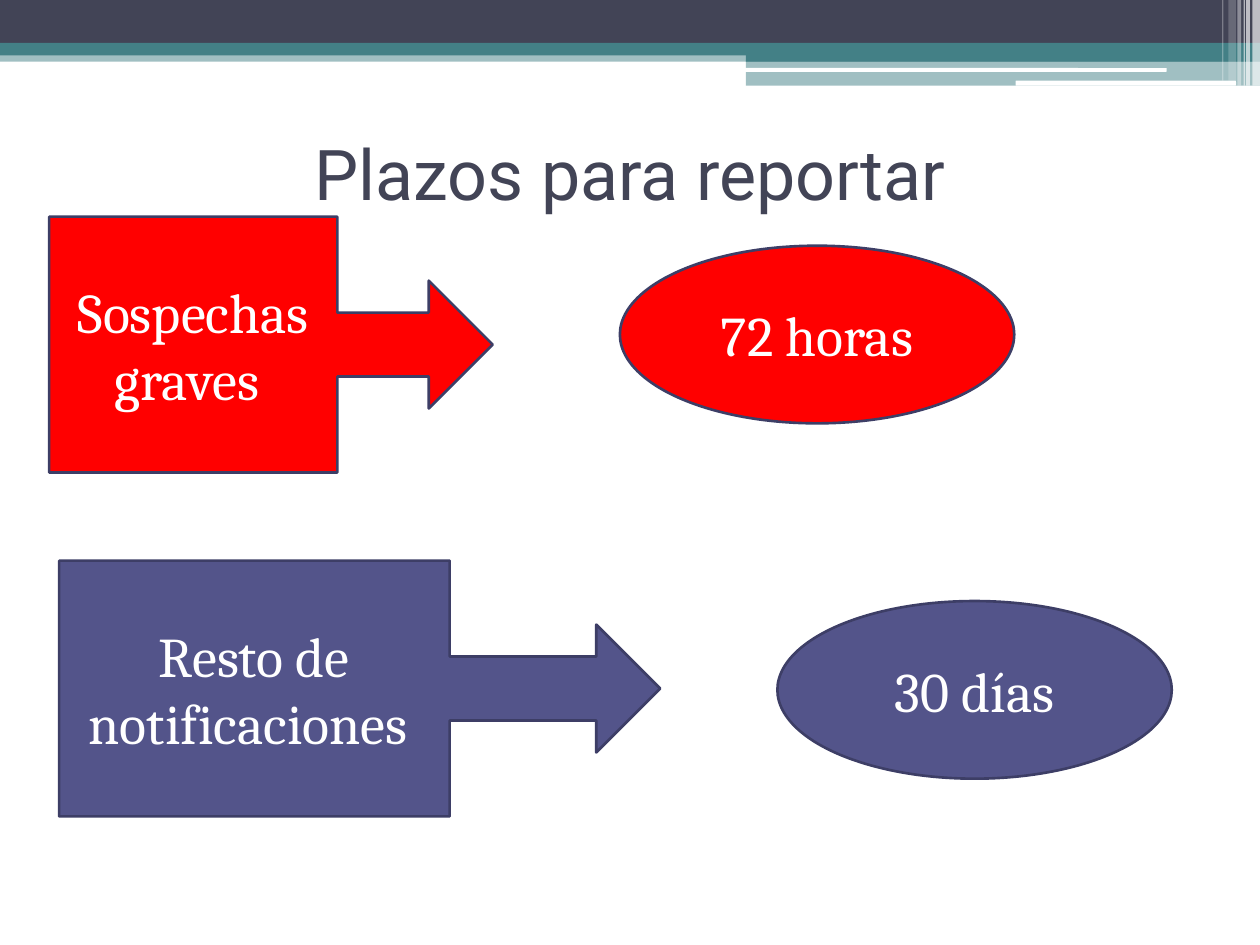
from dataclasses import dataclass

from lxml import etree
from pptx import Presentation
from pptx.dml.color import RGBColor
from pptx.enum.shapes import MSO_SHAPE
from pptx.enum.text import MSO_ANCHOR, PP_ALIGN
from pptx.oxml.ns import qn
from pptx.util import Inches, Pt

RECTANGLE = MSO_SHAPE.RECTANGLE
ROUNDED = MSO_SHAPE.ROUNDED_RECTANGLE
CALLOUT = MSO_SHAPE.RIGHT_ARROW_CALLOUT
ELLIPSE = MSO_SHAPE.OVAL
MIDDLE = MSO_ANCHOR.MIDDLE
CENTER = PP_ALIGN.CENTER
TITLE_ONLY = 5


@dataclass(frozen=True)
class Theme:
    dark: str = "424456"
    teal: str = "438086"
    white: str = "FFFFFF"
    urgent: str = "FF0000"
    regular: str = "53548A"
    outline: str = "3D3E66"
    title_font: str = "Roboto"
    body_font: str = "Cambria"
    title_size: int = 40
    body_size: int = 32
    outline_width: float = 1.5


class SlideBuilder:
    def __init__(self, page, theme):
        self.page = page
        self.theme = theme

    def title(self, text, left, top, width, height):
        box = self.page.shapes.title
        box.left, box.top = Inches(left), Inches(top)
        box.width, box.height = Inches(width), Inches(height)
        theme = self.theme
        self.set_text(box, text, theme.title_font, theme.title_size, theme.dark)

    def band(self, left, top, width, height, color, opacity=100, kind=RECTANGLE):
        """Draw a borderless strip; opacity is a percentage."""
        strip = self.filled(kind, left, top, width, height, color)
        strip.line.fill.background()
        if opacity < 100:
            tint = strip.element.spPr.find(qn("a:solidFill"))[0]
            etree.SubElement(tint, qn("a:alpha"), val=str(opacity * 1000))

    def label(self, kind, text, left, top, width, height, color):
        """Draw an outlined shape with centred text."""
        theme = self.theme
        shape = self.filled(kind, left, top, width, height, color)
        shape.line.color.rgb = RGBColor.from_string(theme.outline)
        shape.line.width = Pt(theme.outline_width)
        self.set_text(shape, text, theme.body_font, theme.body_size, theme.white)

    def filled(self, kind, left, top, width, height, color):
        shape = self.page.shapes.add_shape(
            kind, Inches(left), Inches(top), Inches(width), Inches(height))
        shape.shadow.inherit = False
        shape.fill.solid()
        shape.fill.fore_color.rgb = RGBColor.from_string(color)
        return shape

    def set_text(self, box, text, font, size, color):
        frame = box.text_frame
        frame.text = text
        frame.word_wrap = True
        frame.vertical_anchor = MIDDLE
        para = frame.paragraphs[0]
        para.alignment = CENTER
        for span in para.runs:
            span.font.name = font
            span.font.size = Pt(size)
            span.font.color.rgb = RGBColor.from_string(color)


def draw_header(builder):
    theme = builder.theme
    builder.band(0, 0.4, 10, 0.09, theme.teal, 50)
    builder.band(0, 0, 10, 0.34, theme.dark)
    builder.band(0, 0.34, 10, 0.1, theme.teal)
    builder.band(5.92, 0.39, 4.08, 0.1, theme.teal)
    builder.band(5.92, 0.48, 4.08, 0.2, theme.teal, 50)
    builder.band(5.91, 0.54, 3.35, 0.03, theme.white, kind=ROUNDED)
    builder.band(8.06, 0.64, 1.75, 0.04, theme.white, kind=ROUNDED)

    stripes = [
        (9.94, 0.06, 0.68, 65),
        (9.89, 0.03, 0.68, 65),
        (9.87, 0.01, 0.68, 60),
        (9.82, 0.03, 0.68, 40),
        (9.75, 0.06, 0.64, 20),
        (9.7, 0.01, 0.64, 30),
    ]
    for left, width, height, opacity in stripes:
        builder.band(left, 0, width, height, theme.white, opacity)


def draw_deadlines(builder):
    theme = builder.theme
    builder.label(CALLOUT, "Sospechas graves ", 0.39, 1.72, 3.52, 2.03, theme.urgent)
    builder.label(ELLIPSE, "72 horas", 4.92, 1.95, 3.13, 1.41, theme.urgent)
    builder.label(CALLOUT, "Resto de notificaciones ", 0.47, 4.45, 4.77, 2.03, theme.regular)
    builder.label(ELLIPSE, "30 días", 6.17, 4.77, 3.13, 1.41, theme.regular)


def main():
    deck = Presentation()
    deck.slide_width, deck.slide_height = Inches(10), Inches(7.5)
    page = deck.slides.add_slide(deck.slide_layouts[TITLE_ONLY])
    builder = SlideBuilder(page, Theme())
    draw_header(builder)
    builder.title("Plazos para reportar", 0.5, 0.86, 9, 1.02)
    draw_deadlines(builder)
    deck.save("out.pptx")


if __name__ == "__main__":
    main()
